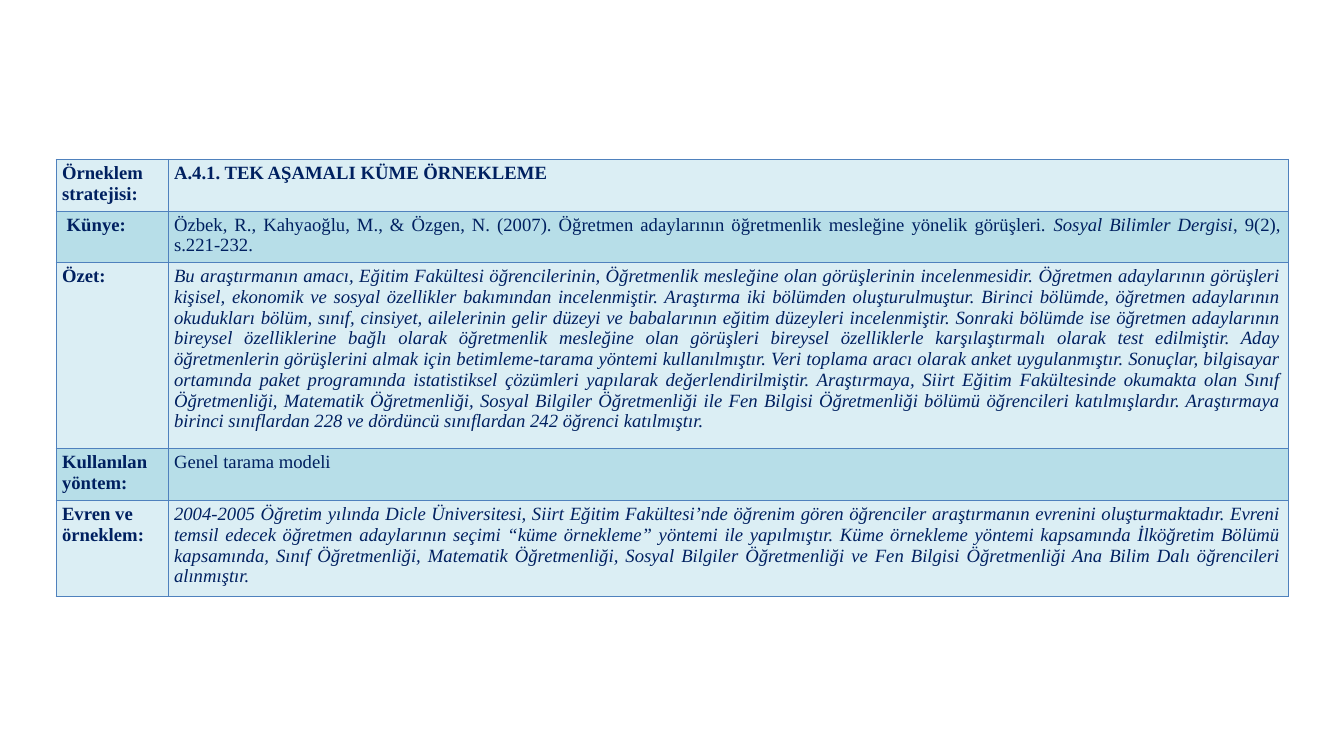
from dataclasses import dataclass

from lxml.etree import SubElement
from pptx import Presentation
from pptx.dml.color import RGBColor as RGB
from pptx.enum.text import PP_ALIGN as ALIGN
from pptx.oxml.ns import qn
from pptx.util import Inches, Pt


@dataclass(frozen=True)
class Theme:
    font: str = "Times New Roman"
    size: int = 20
    text: str = "002060"
    bands: tuple = ("DBEEF4", "B7DEE8")
    border: str = "4F81BD"
    border_width: int = 1


THEME = Theme()
PLAIN, BOLD, ITALIC = {}, {"bold": True}, {"italic": True}

SUMMARY = [
    "Bu araştırmanın amacı, Eğitim Fakültesi öğrencilerinin, Öğretmenlik mesleğine olan "
    "görüşlerinin incelenmesidir.",
    "Öğretmen adaylarının görüşleri kişisel, ekonomik ve sosyal özellikler bakımından "
    "incelenmiştir.",
    "Araştırma iki bölümden oluşturulmuştur.",
    "Birinci bölümde, öğretmen adaylarının okudukları bölüm, sınıf, cinsiyet, ailelerinin gelir "
    "düzeyi ve babalarının eğitim düzeyleri incelenmiştir.",
    "Sonraki bölümde ise öğretmen adaylarının bireysel özelliklerine bağlı olarak öğretmenlik "
    "mesleğine olan görüşleri bireysel özelliklerle karşılaştırmalı olarak test edilmiştir.",
    "Aday öğretmenlerin görüşlerini almak için betimleme-tarama yöntemi kullanılmıştır.",
    "Veri toplama aracı olarak anket uygulanmıştır.",
    "Sonuçlar, bilgisayar ortamında paket programında istatistiksel çözümleri yapılarak "
    "değerlendirilmiştir.",
    "Araştırmaya, Siirt Eğitim Fakültesinde okumakta olan Sınıf Öğretmenliği, Matematik "
    "Öğretmenliği, Sosyal Bilgiler Öğretmenliği ile Fen Bilgisi Öğretmenliği bölümü "
    "öğrencileri katılmışlardır.",
    "Araştırmaya birinci sınıflardan 228 ve dördüncü sınıflardan 242 öğrenci katılmıştır.",
]
SAMPLE = [
    "2004-2005 Öğretim yılında Dicle Üniversitesi, Siirt Eğitim Fakültesi’nde öğrenim gören "
    "öğrenciler araştırmanın evrenini oluşturmaktadır.",
    "Evreni temsil edecek öğretmen adaylarının seçimi “küme örnekleme” yöntemi ile yapılmıştır.",
    "Küme örnekleme yöntemi kapsamında İlköğretim Bölümü kapsamında, Sınıf Öğretmenliği, "
    "Matematik Öğretmenliği, Sosyal Bilgiler Öğretmenliği ve Fen Bilgisi Öğretmenliği Ana Bilim "
    "Dalı öğrencileri alınmıştır.",
]
# Each row: label, text runs with their format, height in inches
ROWS = [
    ("Örneklem stratejisi:", [("A.4.1. TEK AŞAMALI KÜME ÖRNEKLEME", BOLD)], 0.77),
    (" Künye:", [
        ("Özbek, R., Kahyaoğlu, M., & Özgen, N. (2007). Öğretmen adaylarının öğretmenlik "
         "mesleğine yönelik görüşleri. ", PLAIN),
        ("Sosyal Bilimler Dergisi", ITALIC),
        (", 9(2), s.221-232.", PLAIN),
    ], 0.77),
    ("Özet:", [(" ".join(SUMMARY), ITALIC)], 2.77),
    ("Kullanılan yöntem:", [("Genel tarama modeli", PLAIN)], 0.77),
    ("Evren ve örneklem:", [(" ".join(SAMPLE), ITALIC)], 1.43),
]
SLIDE_W, SLIDE_H = 20, 11.25
COLUMNS = (SLIDE_W / 12, SLIDE_W * 10 / 12)
HEIGHT = sum(height for _, _, height in ROWS)
LEFT, TOP = (SLIDE_W - sum(COLUMNS)) / 2, (SLIDE_H - HEIGHT) / 2
MARGINS = {"margin_left": 0.09, "margin_right": 0.11, "margin_top": 0.05, "margin_bottom": 0.05}


def add_borders(cell):
    tc_pr = cell._tc.get_or_add_tcPr()
    for i, side in enumerate(("lnL", "lnR", "lnT", "lnB")):
        line = SubElement(tc_pr, qn(f"a:{side}"), w=str(Pt(THEME.border_width)))
        fill = SubElement(line, qn("a:solidFill"))
        SubElement(fill, qn("a:srgbClr"), val=THEME.border)
        tc_pr.insert(i, line)  # borders come before the cell fill


def fill_cell(cell, runs, band):
    for name, inches in MARGINS.items():
        setattr(cell, name, Inches(inches))
    cell.fill.solid()
    cell.fill.fore_color.rgb = RGB.from_string(band)
    add_borders(cell)
    p = cell.text_frame.paragraphs[0]
    p.alignment = ALIGN.JUSTIFY
    for text, style in runs:
        r = p.add_run()
        r.text = text
        formats = {"name": THEME.font, "size": Pt(THEME.size), "bold": False, "italic": False}
        for name, value in (formats | style).items():
            setattr(r.font, name, value)
        r.font.color.rgb = RGB.from_string(THEME.text)


def main():
    prs = Presentation()
    prs.slide_width, prs.slide_height = Inches(SLIDE_W), Inches(SLIDE_H)
    s = prs.slides.add_slide(prs.slide_layouts[6])
    frame = s.shapes.add_table(len(ROWS), len(COLUMNS), Inches(LEFT), Inches(TOP),
                               Inches(sum(COLUMNS)), Inches(HEIGHT))
    table = frame.table
    table.first_row = table.horz_banding = False
    for column, width in zip(table.columns, COLUMNS):
        column.width = Inches(width)
    for i, (label, runs, height) in enumerate(ROWS):
        table.rows[i].height = Inches(height)
        band = THEME.bands[i % 2]
        fill_cell(table.cell(i, 0), [(label, BOLD)], band)
        fill_cell(table.cell(i, 1), runs, band)
    table.cell(len(ROWS) - 1, 0).text_frame.paragraphs[0].alignment = ALIGN.LEFT
    prs.save("out.pptx")


if __name__ == "__main__":
    main()
